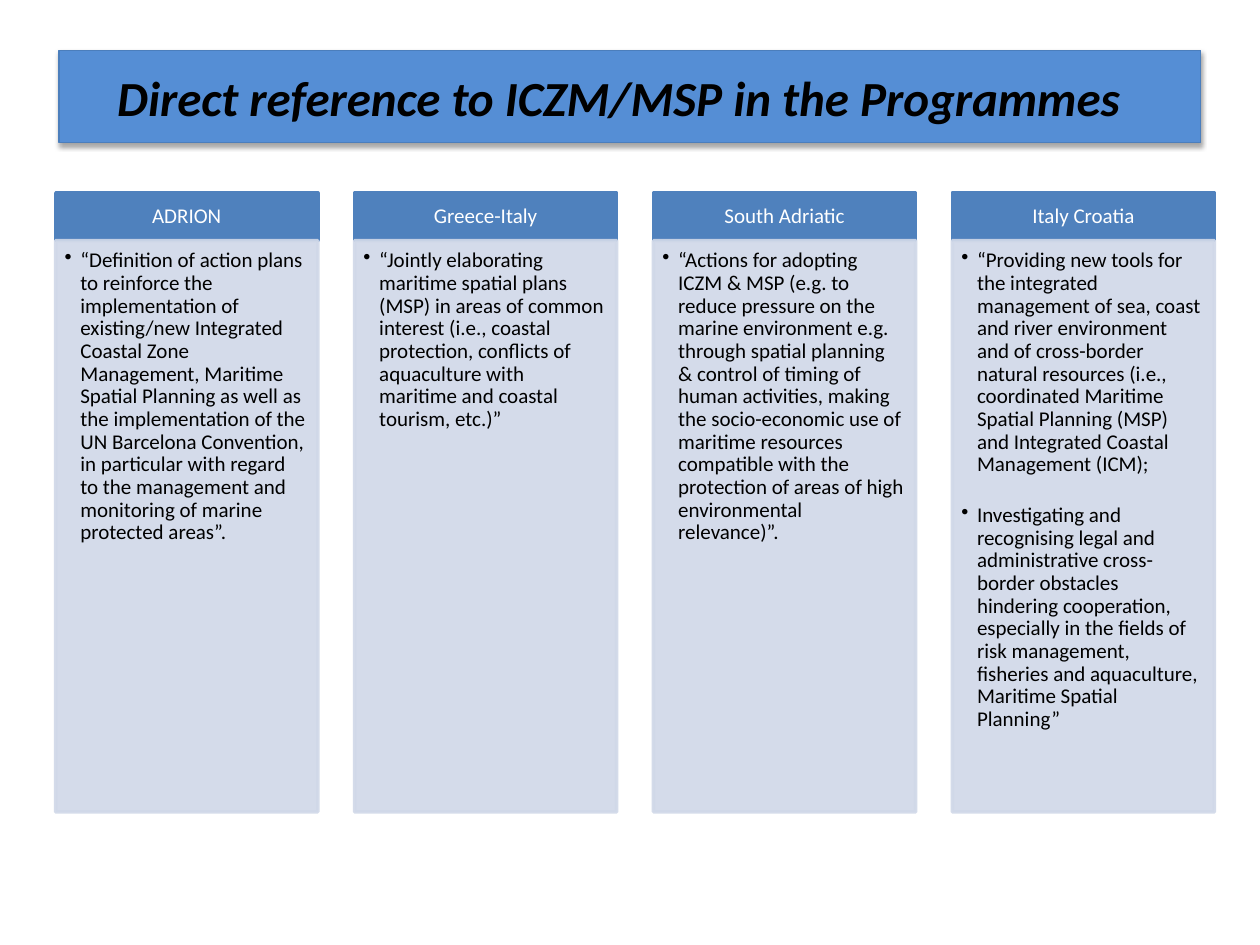
from lxml import etree
from pptx import Presentation
from pptx.dml.color import RGBColor
from pptx.enum.shapes import MSO_SHAPE
from pptx.enum.text import MSO_ANCHOR, MSO_AUTO_SIZE, PP_ALIGN
from pptx.oxml import parse_xml
from pptx.oxml.ns import nsdecls, qn
from pptx.util import Pt

RECT = MSO_SHAPE.RECTANGLE
MID, TOP = MSO_ANCHOR.MIDDLE, MSO_ANCHOR.TOP
MID_X, LEFT = PP_ALIGN.CENTER, PP_ALIGN.LEFT
FIXED = MSO_AUTO_SIZE.NONE

# Content
TITLE = "Direct reference to ICZM/MSP in the Programmes"
COLS = [
    ("ADRION", [
        "“Definition of action plans to reinforce the implementation of "
        "existing/new Integrated Coastal Zone Management, Maritime Spatial "
        "Planning as well as the implementation of the UN Barcelona "
        "Convention, in particular with regard to the management and "
        "monitoring of marine protected areas”."]),
    ("Greece-Italy", [
        "“Jointly elaborating maritime spatial plans (MSP) in areas of common "
        "interest (i.e., coastal protection, conflicts of aquaculture with "
        "maritime and coastal tourism, etc.)”"]),
    ("South Adriatic", [
        "“Actions for adopting ICZM & MSP (e.g. to reduce pressure on the "
        "marine environment e.g. through spatial planning & control of timing "
        "of human activities, making the socio-economic use of maritime "
        "resources compatible with the protection of areas of high "
        "environmental relevance)”."]),
    ("Italy Croatia", [
        "“Providing new tools for the integrated management of sea, coast and "
        "river environment and of cross-border natural resources (i.e., "
        "coordinated Maritime Spatial Planning (MSP) and Integrated Coastal "
        "Management (ICM);",
        "Investigating and recognising legal and administrative cross-border "
        "obstacles hindering cooperation, especially in the fields of risk "
        "management, fisheries and aquaculture, Maritime Spatial Planning”"]),
]
HUES = {"bar": "558ED5", "edge": "4B7EBC", "head": "4F81BD",
        "body": "D0D8E8", "dark": "000000", "light": "FFFFFF"}

# Column grid, in points
X, Y, WIDE, STEP = 31.8, 110.2, 149.8, 170.8
HEAD_H, BODY_H = 27.3, 326.5


def hue(name):
    return RGBColor.from_string(HUES[name])


def paint(shape, fill, edge, width):
    shape.fill.solid()
    shape.fill.fore_color.rgb = hue(fill)
    shape.line.color.rgb = hue(edge)
    shape.line.width = Pt(width)


def inset(frame, left, top, right, bottom):
    frame.margin_left, frame.margin_top = Pt(left), Pt(top)
    frame.margin_right, frame.margin_bottom = Pt(right), Pt(bottom)


def style(para, size, color, align):
    para.alignment = align
    para.font.name = "Calibri"
    para.font.size = Pt(size)
    para.font.color.rgb = hue(color)


def bullet(para):
    props = para._p.get_or_add_pPr()
    props.set("marL", str(Pt(9)))
    props.set("indent", str(-Pt(9)))
    etree.SubElement(props, qn("a:buChar")).set("char", "•")


def add_box(slide, x, y, high, color, anchor):
    box = slide.shapes.add_shape(RECT, Pt(x), Pt(y), Pt(WIDE), Pt(high))
    box.shadow.inherit = False
    paint(box, color, color, 2)
    box.text_frame.word_wrap = True
    box.text_frame.vertical_anchor = anchor
    return box


def add_title(slide):
    bar = slide.shapes.title
    bar.left, bar.top, bar.width, bar.height = Pt(33.8), Pt(28.8), Pt(652.4), Pt(52.6)
    props = bar._element.spPr
    props.append(parse_xml(
        f'<a:prstGeom {nsdecls("a")} prst="roundRect"><a:avLst/></a:prstGeom>'))
    paint(bar, "bar", "edge", 0.75)
    props.append(parse_xml(
        f'<a:effectLst {nsdecls("a")}><a:outerShdw blurRad="{Pt(3.1)}" '
        f'dist="{Pt(1.8)}" dir="5400000" rotWithShape="0">'
        f'<a:srgbClr val="{HUES["dark"]}"><a:alpha val="35000"/></a:srgbClr>'
        '</a:outerShdw></a:effectLst>'))
    frame = bar.text_frame
    frame.text = TITLE
    frame.auto_size = FIXED
    frame.word_wrap = True
    frame.vertical_anchor = MID
    inset(frame, 7.2, 3.6, 20.2, 3.6)
    para = frame.paragraphs[0]
    style(para, 28, "dark", MID_X)
    para.font.bold = para.font.italic = True


def add_head(slide, x, text):
    frame = add_box(slide, x, Y, HEAD_H, "head", MID).text_frame
    inset(frame, 6.8, 3.9, 6.8, 3.9)
    frame.text = text
    para = frame.paragraphs[0]
    para.line_spacing = 0.9
    style(para, 12, "light", MID_X)


def add_body(slide, x, items):
    box = add_box(slide, x, Y + HEAD_H, BODY_H, "body", TOP)
    for tint in box._element.spPr.iter(qn("a:srgbClr")):
        etree.SubElement(tint, qn("a:alpha")).set("val", "90000")
    frame = box.text_frame
    inset(frame, 5.1, 5.1, 6.8, 7.7)
    for i, item in enumerate(items):
        para = frame.add_paragraph() if i else frame.paragraphs[0]
        para.text = item
        para.line_spacing = 0.9
        if i:
            para.space_before = Pt(16)
        bullet(para)
        style(para, 12, "dark", LEFT)


def main():
    deck = Presentation()
    deck.slide_width, deck.slide_height = Pt(720), Pt(540)
    slide = deck.slides.add_slide(deck.slide_layouts[5])
    add_title(slide)
    for i, (head, items) in enumerate(COLS):
        x = X + i * STEP
        add_head(slide, x, head)
        add_body(slide, x, items)
    deck.save("out.pptx")


if __name__ == "__main__":
    main()
